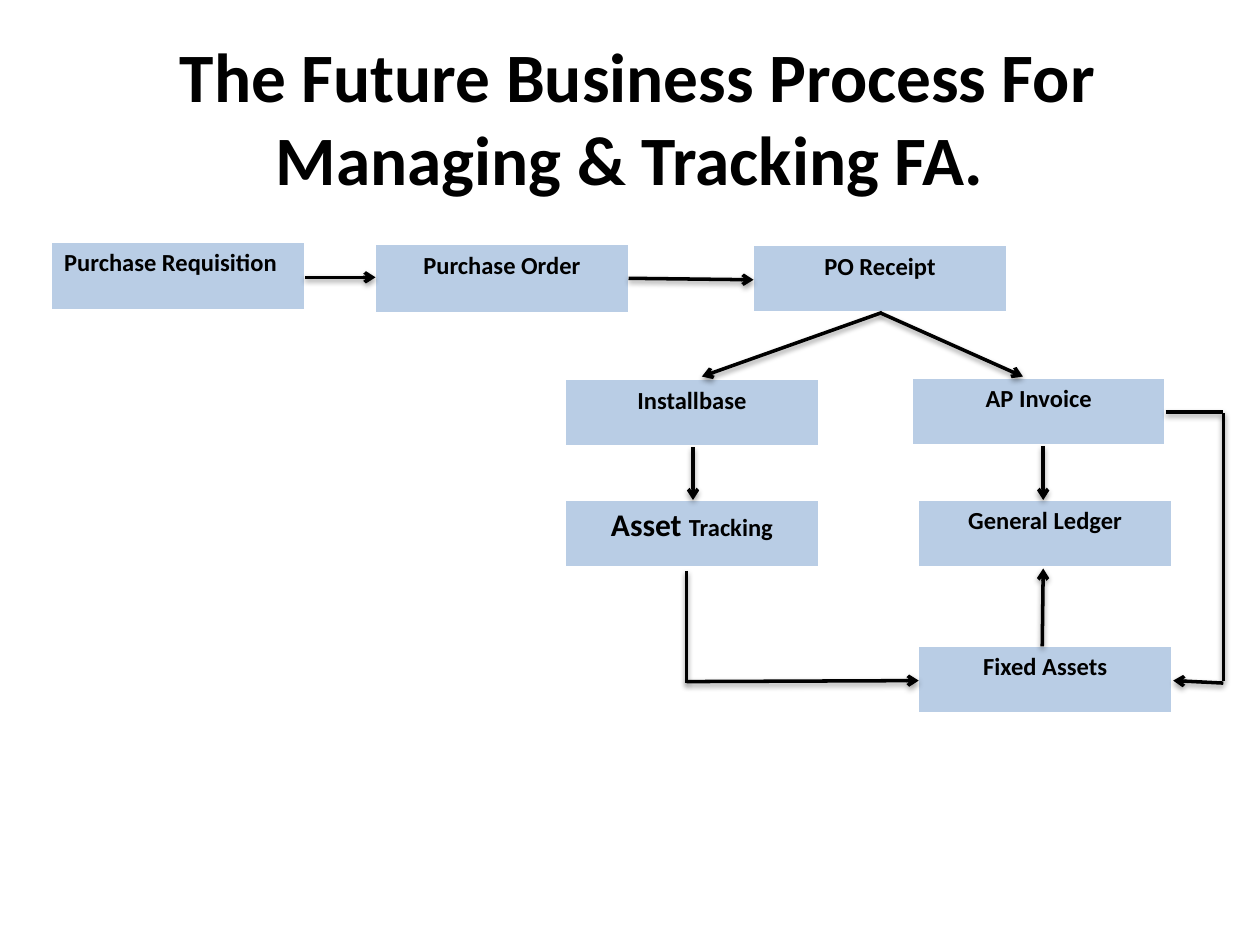
import pptx
import pptx.dml.color
import pptx.enum.shapes
import pptx.enum.text
import pptx.oxml
import pptx.oxml.ns
import pptx.util
from pptx.util import Cm

FONT = "Calibri"
BLACK = "000000"
WHITE = "FFFFFF"
BOX_FILL = "B9CDE5"
BOX_WIDTH = 5.1
CENTER = pptx.enum.text.PP_ALIGN.CENTER
LEFT = pptx.enum.text.PP_ALIGN.LEFT

# Step boxes: left, top, height (cm), alignment, runs of (text, size)
STEPS = [
    (1.04, 4.88, 1.4, LEFT, [("Purchase Requisition", 14)]),
    (7.57, 4.93, 1.4, CENTER, [("Purchase Order", 14)]),
    (15.19, 4.95, 1.37, CENTER, [("PO Receipt", 14)]),
    (11.4, 7.65, 1.37, CENTER, [("Installbase", 14)]),
    (18.39, 7.62, 1.37, CENTER, [("AP Invoice", 14)]),
    (11.4, 10.08, 1.37, CENTER, [("Asset ", 18), ("Tracking", 14)]),
    (18.52, 10.08, 1.37, CENTER, [("General Ledger", 14)]),
    (18.52, 13.03, 1.37, CENTER, [("Fixed Assets", 14)]),
]

# Flow lines: start x, y, end x, y (cm), arrowhead at the end
FLOWS = [
    (6.15, 5.59, 7.57, 5.59, True),       # requisition to order
    (12.67, 5.61, 15.19, 5.64, True),     # order to receipt
    (17.78, 6.3, 14.15, 7.59, True),      # receipt to installbase
    (17.73, 6.3, 20.62, 7.59, True),      # receipt to invoice
    (13.97, 9.02, 13.97, 10.08, True),    # installbase to tracking
    (21.03, 8.99, 21.03, 10.08, True),    # invoice to ledger
    (21.01, 13.03, 21.03, 11.46, True),   # fixed assets to ledger
    (13.84, 11.51, 13.84, 13.77, False),  # tracking to fixed assets
    (13.84, 13.74, 18.52, 13.72, True),
    (23.5, 8.31, 24.66, 8.31, False),     # invoice to fixed assets
    (24.66, 8.33, 24.66, 13.72, False),
    (24.66, 13.77, 23.65, 13.72, True),
]


def color(value):
    return pptx.dml.color.RGBColor.from_string(value)


def parse_xml(text):
    return pptx.oxml.parse_xml(text.replace(" ", f" {pptx.oxml.ns.nsdecls('a')} ", 1))


def style_font(font, size):
    font.name = FONT
    font.size = pptx.util.Pt(size)
    font.color.rgb = color(BLACK)


def add_title(slide):
    box = slide.shapes.add_textbox(Cm(1.27), Cm(0.76), Cm(22.86), Cm(3.18))
    frame = box.text_frame
    frame.word_wrap = True
    frame.vertical_anchor = pptx.enum.text.MSO_ANCHOR.MIDDLE
    paragraph = frame.paragraphs[0]
    paragraph.alignment = CENTER
    paragraph.text = " The Future Business Process For Managing & Tracking FA."
    style_font(paragraph.font, 39.6)
    paragraph.font.bold = True


def set_borders(cell):
    properties = cell._tc.get_or_add_tcPr()
    for index, (side, width) in enumerate([("L", 1), ("R", 1), ("T", 1), ("B", 3)]):
        properties.insert(index, parse_xml(
            f'<a:ln{side} w="{pptx.util.Pt(width)}"><a:solidFill>'
            f'<a:srgbClr val="{WHITE}"/></a:solidFill></a:ln{side}>'))


def add_step(slide, left, top, height, alignment, runs):
    table = slide.shapes.add_table(
        1, 1, Cm(left), Cm(top), Cm(BOX_WIDTH), Cm(height)).table
    cell = table.cell(0, 0)
    cell.fill.solid()
    cell.fill.fore_color.rgb = color(BOX_FILL)
    set_borders(cell)
    paragraph = cell.text_frame.paragraphs[0]
    paragraph.alignment = alignment
    for text, size in runs:
        run = paragraph.add_run()
        run.text = text
        style_font(run.font, size)
        run.font.bold = True


def add_flow(slide, start_x, start_y, end_x, end_y, arrow):
    connector = slide.shapes.add_connector(
        pptx.enum.shapes.MSO_CONNECTOR.STRAIGHT,
        Cm(start_x), Cm(start_y), Cm(end_x), Cm(end_y))
    connector.line.color.rgb = color(BLACK)
    connector.line.width = pptx.util.Pt(2)
    if arrow:
        connector.line._get_or_add_ln().append(parse_xml('<a:tailEnd type="arrow"/>'))
    # Soft shadow straight below the line
    connector._element.spPr.append(parse_xml(
        '<a:effectLst ><a:outerShdw blurRad="40000" dist="20000" dir="5400000" '
        f'rotWithShape="0"><a:srgbClr val="{BLACK}"><a:alpha val="38000"/>'
        '</a:srgbClr></a:outerShdw></a:effectLst>'))


def main():
    presentation = pptx.Presentation()
    presentation.slide_width = Cm(25.4)
    presentation.slide_height = Cm(19.05)
    slide = presentation.slides.add_slide(presentation.slide_layouts[6])

    add_title(slide)
    for step in STEPS:
        add_step(slide, *step)
    for flow in FLOWS:
        add_flow(slide, *flow)

    presentation.save("out.pptx")


if __name__ == "__main__":
    main()
